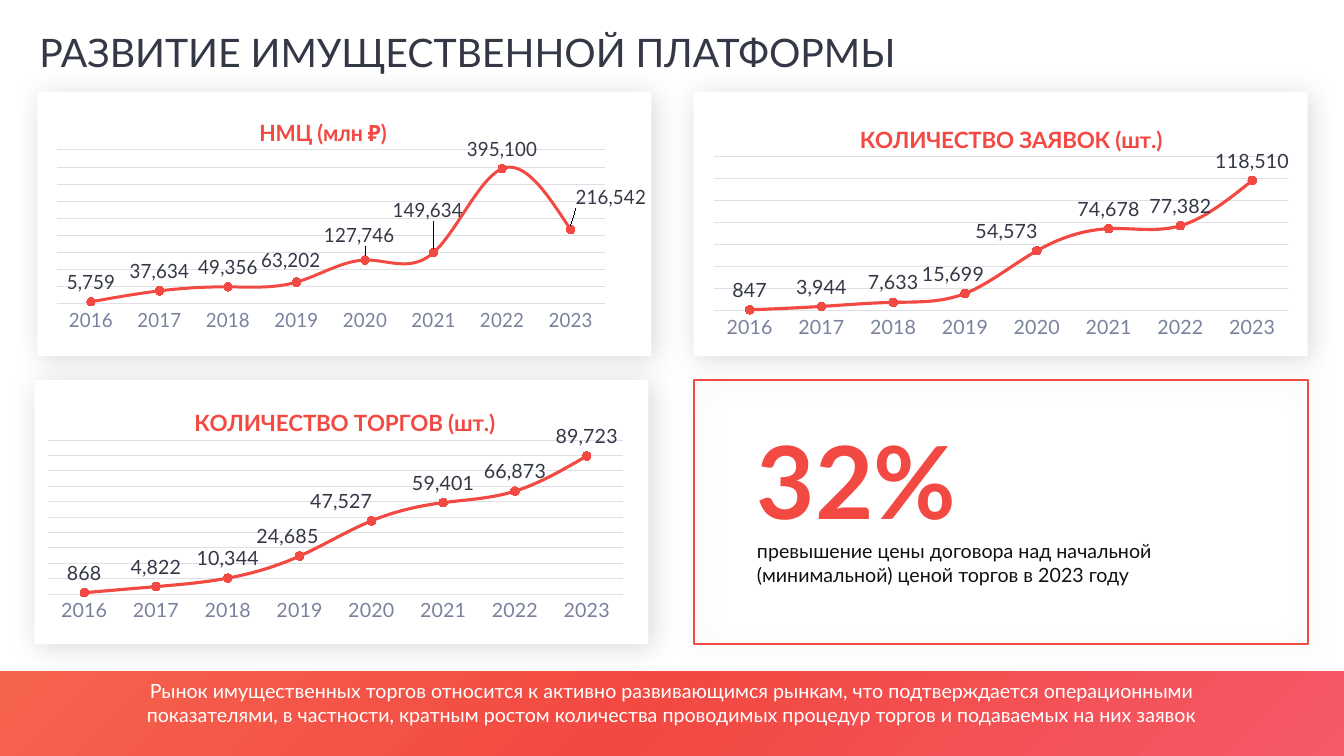
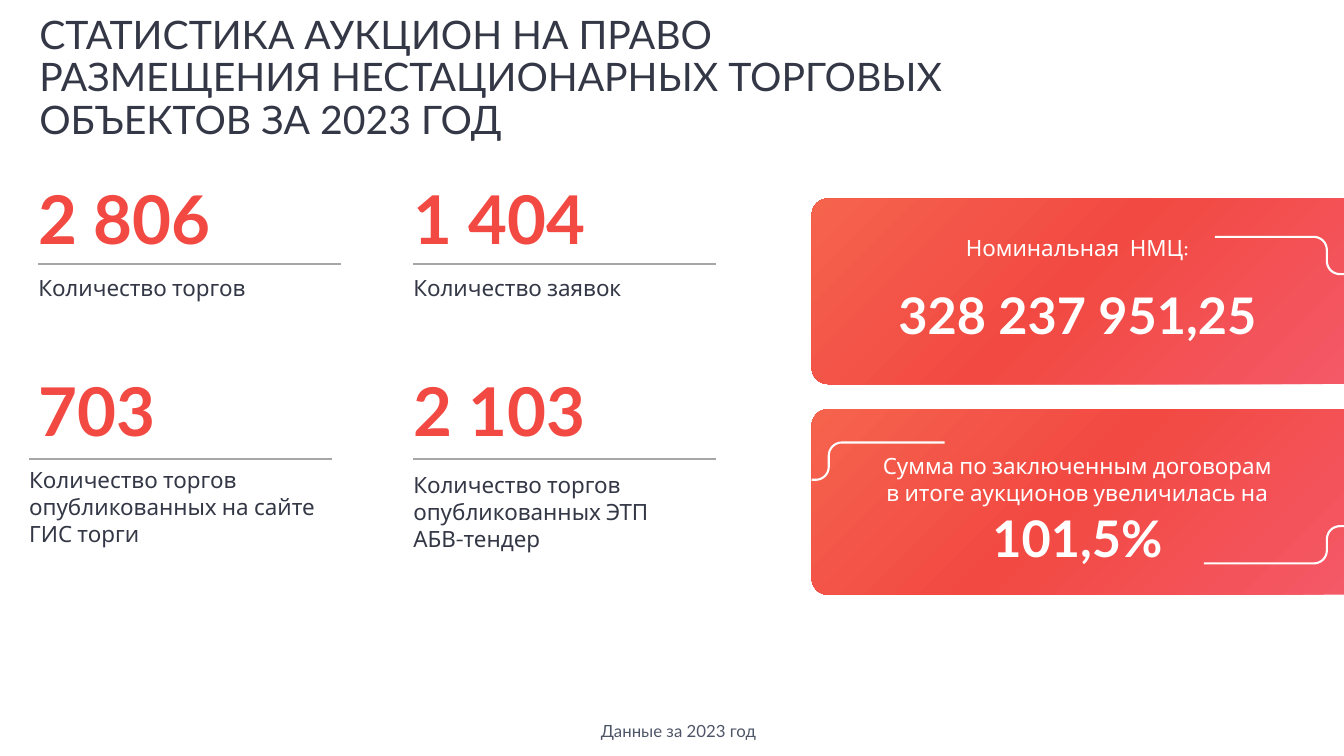
import math

import pptx
import pptx.chart.data
import pptx.dml.color
import pptx.enum.chart
import pptx.enum.shapes
import pptx.enum.text
import pptx.oxml
import pptx.oxml.ns
import pptx.util

Inches = pptx.util.Inches
Pt = pptx.util.Pt
RGBColor = pptx.dml.color.RGBColor
MSO_SHAPE = pptx.enum.shapes.MSO_SHAPE
PP_ALIGN = pptx.enum.text.PP_ALIGN
MSO_ANCHOR = pptx.enum.text.MSO_ANCHOR
qn = pptx.oxml.ns.qn

RED = RGBColor(0xF2, 0x49, 0x42)
PINK = RGBColor(0xF4, 0x59, 0x67)
ORANGE = RGBColor(0xF5, 0x63, 0x4D)
INK = RGBColor(0x34, 0x38, 0x46)
BLACK = RGBColor(0x10, 0x11, 0x15)
SLATE = RGBColor(0x4E, 0x55, 0x68)
AXIS_TEXT = RGBColor(0x79, 0x81, 0x9C)
GRID = RGBColor(0xDE, 0xE0, 0xE6)
RULE = RGBColor(0xA6, 0xA6, 0xA6)
WHITE = RGBColor(0xFF, 0xFF, 0xFF)

LATO = "Lato"
KARLA = "Karla"
SLIDE_WIDTH, SLIDE_HEIGHT = 13.33, 7.5
CARD_WIDTH, CARD_HEIGHT = 6.09, 2.62
CHART_WIDTH, CHART_HEIGHT = 5.99, 2.54
YEARS = [str(year) for year in range(2016, 2024)]

# title, values, axis maximum, axis step, card corner, chart corner,
# title corner in the chart, label shifts by point
CHARTS = [
    ("НМЦ (млн ₽)",
     (5759, 37634, 49356, 63202, 127746, 149634, 395100, 216542),
     450000, 50000, (0.37, 0.91), (0.42, 0.84), (0.37, 0.11),
     {3: (-0.01, -0.01), 4: (-0.01, -0.02), 5: (-0.01, -0.09),
      7: (0.07, -0.05)}),
    ("КОЛИЧЕСТВО ЗАЯВОК (шт.)",
     (847, 3944, 7633, 15699, 54573, 74678, 77382, 118510),
     140000, 20000, (6.88, 0.91), (6.93, 0.91), (0.26, 0.11),
     {3: (-0.02, 0), 4: (-0.05, 0)}),
    ("КОЛИЧЕСТВО ТОРГОВ (шт.)",
     (868, 4822, 10344, 24685, 47527, 59401, 66873, 89723),
     100000, 10000, (0.34, 3.77), (0.33, 3.72), (0.26, 0.11),
     {3: (-0.02, 0), 4: (-0.05, 0)}),
]

# value, label, corner of the value, left of the rule, then the distances
# from the top of the value to the rule and to the label
STATISTICS = [
    ("2 806", "Количество торгов", 0.38, 1.8, 0.38, 0.82, 0.87),
    ("1 404", "Количество заявок", 4.1, 1.8, 4.1, 0.82, 0.87),
    ("703", "Количество торгов опубликованных на сайте ГИС торги",
     0.38, 3.7, 0.29, 0.85, 0.88),
    ("2 103", "Количество торгов опубликованных ЭТП АБВ-тендер",
     4.1, 3.7, 4.1, 0.85, 0.93),
]


def inches(*lengths):
    return [Inches(length) for length in lengths]


def style_font(font, size, color, name=LATO, bold=False):
    font.name = name
    font.size = Pt(size)
    font.bold = bold
    font.color.rgb = color


def add_paragraph(frame, text, size, color, name=LATO, bold=False,
                  align=PP_ALIGN.LEFT, spacing=None):
    """Fill the first paragraph while it is empty, otherwise append one."""
    paragraph = frame.paragraphs[0]
    if paragraph.runs:
        paragraph = frame.add_paragraph()
    paragraph.alignment = align
    if spacing:
        paragraph.line_spacing = spacing
    run = paragraph.add_run()
    run.text = text
    style_font(run.font, size, color, name, bold)


def add_text_frame(slide, left, top, width, height, inset=0.0,
                   anchor=MSO_ANCHOR.TOP):
    box = slide.shapes.add_textbox(*inches(left, top, width, height))
    frame = box.text_frame
    frame.word_wrap = True
    frame.margin_left = Inches(inset)
    frame.vertical_anchor = anchor
    return frame


def add_titled_slide(presentation, title, width, height):
    slide = presentation.slides.add_slide(presentation.slide_layouts[5])
    shape = slide.shapes.title
    shape.left, shape.top, shape.width, shape.height = inches(
        0.29, 0.06, width, height)
    frame = shape.text_frame
    frame.word_wrap = True
    frame.auto_size = pptx.enum.text.MSO_AUTO_SIZE.NONE
    frame.vertical_anchor = MSO_ANCHOR.MIDDLE
    add_paragraph(frame, title, 28, INK, spacing=0.9)
    return slide


def add_gradient_band(slide, left, top, width, height, corner=0.0):
    """Band with rounded left corners: a top-rounded shape turned by 270°."""
    shape = slide.shapes.add_shape(
        MSO_SHAPE.ROUND_2_SAME_RECTANGLE,
        *inches(left + (width - height) / 2, top + (height - width) / 2,
                height, width))
    shape.rotation = 270
    shape.adjustments[0] = corner
    shape.adjustments[1] = 0
    shape.shadow.inherit = False
    shape.line.fill.background()
    stops = "".join(
        f'<a:gs pos="{position * 1000}"><a:srgbClr val="{color}"/></a:gs>'
        for position, color in ((0, PINK), (52, RED), (100, ORANGE)))
    gradient = pptx.oxml.parse_xml(
        f'<a:gradFill {pptx.oxml.ns.nsdecls("a")} rotWithShape="1">'
        f'<a:gsLst>{stops}</a:gsLst><a:lin ang="18900000" scaled="0"/>'
        '</a:gradFill>')
    shape._element.spPr.find(qn("a:prstGeom")).addnext(gradient)


def add_card(slide, left, top, outline=None):
    """White card with a soft shadow, or a hollow one with an outline."""
    shape = slide.shapes.add_shape(
        MSO_SHAPE.ROUNDED_RECTANGLE,
        *inches(left, top, CARD_WIDTH, CARD_HEIGHT))
    shape.adjustments[0] = 0
    if outline:
        shape.fill.background()
        shape.line.color.rgb = outline
        shape.line.width = Pt(1.5)
    else:
        shape.fill.solid()
        shape.fill.fore_color.rgb = WHITE
        shape.line.fill.background()
    shape.shadow.inherit = False
    effects = shape._element.spPr.find(qn("a:effectLst"))
    effects.append(pptx.oxml.parse_xml(
        f'<a:outerShdw {pptx.oxml.ns.nsdecls("a")} blurRad="{Pt(20)}" '
        f'dist="{Pt(3)}" dir="2700000" algn="tl" rotWithShape="0">'
        '<a:srgbClr val="000000"><a:alpha val="15000"/></a:srgbClr>'
        '</a:outerShdw>'))


def make_layout(target="", mode="", **fractions):
    """Manual chart layout; mode "edge" measures from the chart's corner."""
    parts = [f'<c:layoutTarget val="{target}"/>'] if target else []
    if mode:
        parts += [f'<c:{axis}Mode val="{mode}"/>' for axis in "xy"]
    parts += [f'<c:{key} val="{value}"/>' for key, value in fractions.items()]
    return pptx.oxml.parse_xml(
        f'<c:layout {pptx.oxml.ns.nsdecls("c")}><c:manualLayout>'
        f'{"".join(parts)}</c:manualLayout></c:layout>')


def replace_layout(parent, layout, previous=None):
    for old in parent.findall(qn("c:layout")):
        parent.remove(old)
    if previous is None:
        parent.insert(0, layout)
    else:
        parent.find(qn(previous)).addnext(layout)


def style_labels(series, shifts):
    position = pptx.enum.chart.XL_LABEL_POSITION.ABOVE
    labels = series.data_labels
    labels.show_value = True
    labels.number_format = "#,##0"
    labels.number_format_is_linked = False
    labels.position = position
    style_font(labels.font, 14, INK)
    for index, (x, y) in shifts.items():
        label = series.points[index].data_label
        style_font(label.font, 14, INK)
        label.position = position
        element = series._element.xpath(
            f"c:dLbls/c:dLbl[c:idx/@val='{index}']")[0]
        replace_layout(element, make_layout(x=x, y=y), "c:idx")


def add_growth_chart(slide, left, top, title, values, maximum, step,
                     title_corner, shifts):
    data = pptx.chart.data.CategoryChartData(number_format="#,##0")
    data.categories = YEARS
    data.add_series(title, values)
    chart = slide.shapes.add_chart(
        pptx.enum.chart.XL_CHART_TYPE.LINE_MARKERS,
        *inches(left, top, CHART_WIDTH, CHART_HEIGHT), data).chart
    style_font(chart.font, 10, INK)
    chart.has_legend = False
    chart.has_title = True
    add_paragraph(chart.chart_title.text_frame, title, 16, RED, bold=True,
                  align=PP_ALIGN.CENTER)
    x, y = title_corner
    replace_layout(chart.chart_title._element,
                   make_layout(mode="edge", x=x, y=y), "c:tx")
    replace_layout(chart._chartSpace.chart.plotArea,
                   make_layout("inner", "edge", x=0.025, y=0.255,
                               w=0.951, h=0.601))

    value_axis = chart.value_axis
    value_axis.minimum_scale = 0
    value_axis.maximum_scale = maximum
    value_axis.major_unit = step
    value_axis.visible = False
    category_axis = chart.category_axis
    category_axis.major_tick_mark = pptx.enum.chart.XL_TICK_MARK.NONE
    style_font(category_axis.tick_labels.font, 14, AXIS_TEXT)
    for line in (value_axis.major_gridlines.format.line,
                 category_axis.format.line):
        line.color.rgb = GRID
        line.width = Pt(0.75)

    chart.plots[0].vary_by_categories = False
    series = chart.plots[0].series[0]
    series.smooth = True
    series.format.line.color.rgb = RED
    series.format.line.width = Pt(2.25)
    series.marker.style = pptx.enum.chart.XL_MARKER_STYLE.CIRCLE
    series.marker.size = 6
    series.marker.format.fill.solid()
    series.marker.format.fill.fore_color.rgb = RED
    series.marker.format.line.color.rgb = RED
    style_labels(series, shifts)


def add_statistic(slide, value, label, left, top, rule_left, rule_drop,
                  label_drop):
    """Large value, a rule below it and the label below the rule."""
    label_frame = add_text_frame(slide, rule_left, top + label_drop, 2.97, 0.36)
    add_paragraph(label_frame, label, 16, INK, KARLA)
    value_frame = add_text_frame(slide, left, top, 2.82, 0.82,
                                 anchor=MSO_ANCHOR.MIDDLE)
    add_paragraph(value_frame, value, 48, RED, bold=True, spacing=0.9)
    rule_top = top + rule_drop
    rule = slide.shapes.add_connector(
        pptx.enum.shapes.MSO_CONNECTOR.STRAIGHT,
        *inches(rule_left, rule_top, rule_left + 3, rule_top))
    rule.line.color.rgb = RULE
    rule.line.width = Pt(1.5)
    rule._element.spPr.append(pptx.oxml.parse_xml(
        f'<a:effectLst {pptx.oxml.ns.nsdecls("a")}/>'))


def add_rounded_step(slide, start, end, radius=0.13, tail=0.17):
    """White line from start to end with one vertical step near the end."""
    (x0, y0), (x1, y1) = start, end
    across = math.copysign(radius, x1 - x0)
    down = math.copysign(radius, y1 - y0)
    bend = x1 - math.copysign(tail, x1 - x0)
    turns = [(math.sin(angle), math.cos(angle))
             for angle in (math.pi / 16 * step for step in range(9))]
    points = [(bend - across + across * sine, y0 + down - down * cosine)
              for sine, cosine in turns]
    points += [(bend + across - across * cosine, y1 - down + down * sine)
               for sine, cosine in turns]
    builder = slide.shapes.build_freeform(*inches(x0, y0))
    builder.add_line_segments(
        [inches(*point) for point in points + [end]], close=False)
    shape = builder.convert_to_shape()
    shape.shadow.inherit = False
    shape.fill.background()
    shape.line.color.rgb = WHITE
    shape.line.width = Pt(1.5)


def add_amount_panel(slide, left, top, lines, amount, caption_drop,
                     amount_drop):
    """Gradient panel with a caption and a large amount."""
    add_gradient_band(slide, left, top, SLIDE_WIDTH - left, 1.84, 0.087)
    caption = add_text_frame(slide, left + 0.58, top + caption_drop, 4.21, 0.36)
    for line in lines:
        add_paragraph(caption, line, 16, WHITE, KARLA, align=PP_ALIGN.CENTER)
    frame = add_text_frame(slide, left + 0.27, top + amount_drop, 4.83, 0.7)
    add_paragraph(frame, amount, 36, WHITE, bold=True, align=PP_ALIGN.CENTER)


def build_growth_slide(presentation):
    slide = add_titled_slide(
        presentation, "РАЗВИТИЕ ИМУЩЕСТВЕННОЙ ПЛАТФОРМЫ", 10.24, 0.96)
    add_gradient_band(slide, 0, 6.66, SLIDE_WIDTH, 0.84)
    for title, values, maximum, step, card, corner, heading, shifts in CHARTS:
        add_card(slide, *card)
        add_growth_chart(slide, *corner, title, values, maximum, step,
                         heading, shifts)
    add_card(slide, 6.88, 3.77, RED)
    excess = add_text_frame(slide, 7.41, 4.1, 4.8, 1.76, 0.1)
    add_paragraph(excess, "32%", 72, RED, bold=True)
    add_paragraph(excess, "превышение цены договора над начальной "
                  "(минимальной) ценой торгов в 2023 году", 14, BLACK)
    summary = add_text_frame(slide, 0.86, 6.69, 11.61, 0.56, 0.1)
    add_paragraph(summary, "Рынок имущественных торгов относится к активно "
                  "развивающимся рынкам, что подтверждается операционными "
                  "показателями, в частности, кратным ростом количества "
                  "проводимых процедур торгов и подаваемых на них заявок",
                  14, WHITE, align=PP_ALIGN.CENTER)


def build_statistics_slide(presentation):
    slide = add_titled_slide(
        presentation, "СТАТИСТИКА АУКЦИОН НА ПРАВО РАЗМЕЩЕНИЯ "
        "НЕСТАЦИОНАРНЫХ ТОРГОВЫХ ОБЪЕКТОВ ЗА 2023 ГОД", 9.37, 1.45)
    for statistic in STATISTICS:
        add_statistic(slide, *statistic)
    add_amount_panel(slide, 8.05, 1.97, ["Номинальная  НМЦ:"],
                     "328 237 951,25", 0.3, 0.8)
    add_amount_panel(slide, 8.05, 4.06,
                     ["Сумма по заключенным договорам",
                      "в итоге аукционов увеличилась на"],
                     "101,5%", 0.38, 0.92)
    for start, end in (((12.05, 2.35), (13.33, 2.72)),
                       ((9.37, 4.39), (8.05, 4.76)),
                       ((11.94, 5.59), (13.33, 5.22))):
        add_rounded_step(slide, start, end)
    footnote = add_text_frame(slide, 5.31, 7.1, 2.84, 0.3, 0.1)
    add_paragraph(footnote, "Данные за 2023 год", 12, SLATE,
                  align=PP_ALIGN.CENTER)


def main():
    presentation = pptx.Presentation()
    presentation.slide_width = Inches(SLIDE_WIDTH)
    presentation.slide_height = Inches(SLIDE_HEIGHT)
    build_growth_slide(presentation)
    build_statistics_slide(presentation)
    presentation.save("out.pptx")


if __name__ == "__main__":
    main()
